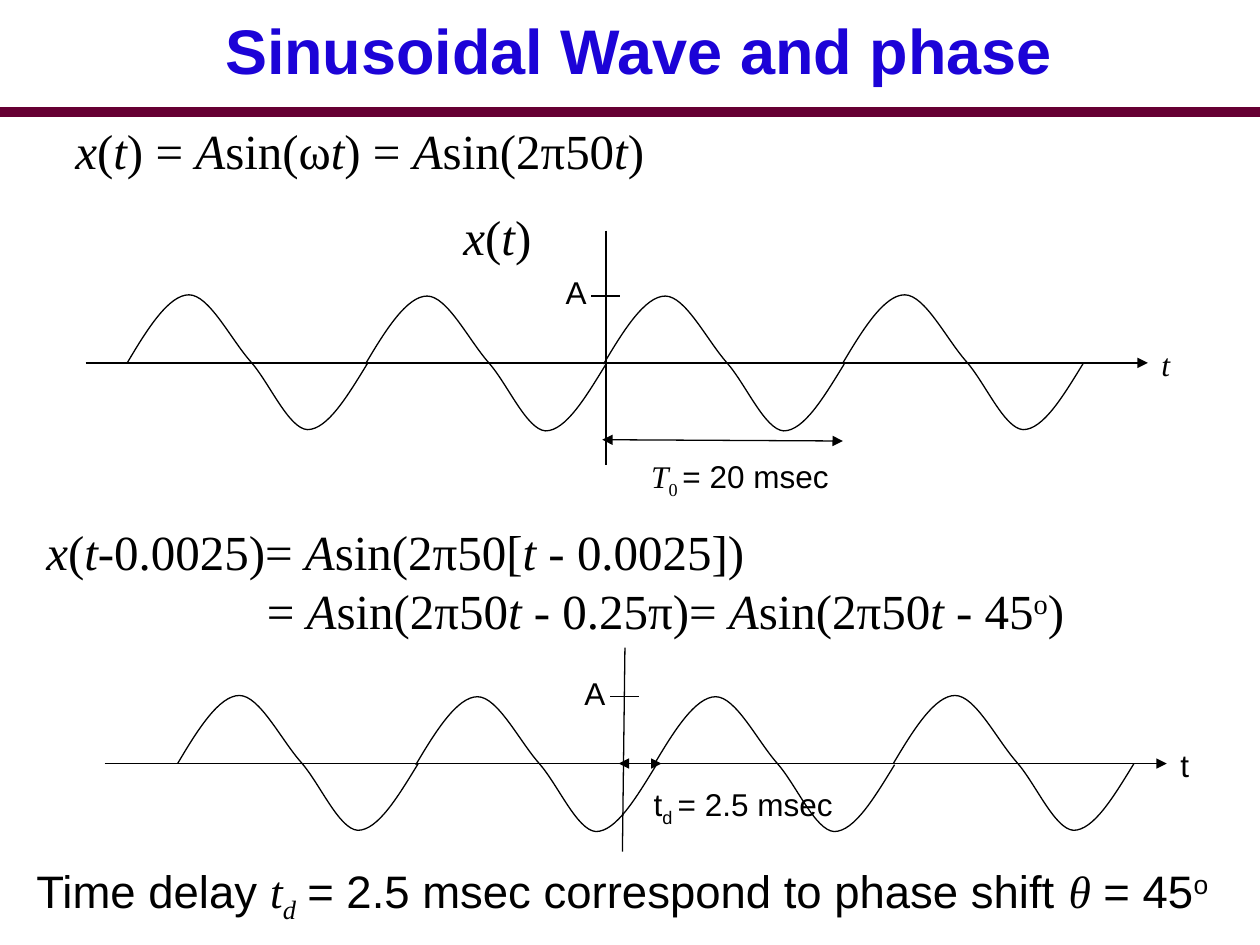
"""Build a slide that compares a sinusoidal wave with its phase-shifted version."""
from itertools import groupby

from lxml import etree
from pptx import Presentation
from pptx import util as u
from pptx.dml.color import RGBColor
from pptx.enum import shapes, text
from pptx.oxml import ns

BLACK = RGBColor(0x00, 0x00, 0x00)
BLUE = RGBColor(0x1C, 0x03, 0xD7)
MAROON = RGBColor(0x66, 0x00, 0x33)
SANS, SERIF = "Arial", "Times New Roman"
ITALIC, SUB, SUPER, SWITCH = "*", "_", "^", "~"

deck = Presentation()
deck.slide_width, deck.slide_height = u.Inches(10), u.Inches(7.5)
COLUMN, ROW = deck.slide_width / 10, deck.slide_height / 7.5
page = deck.slides.add_slide(deck.slide_layouts[5])


def write(wording, place, size=18, font=SANS, color=BLACK, bold=False, box=None, indent=0):
    """Write lines whose marks toggle italic, subscript, superscript and the other font."""
    left, top, width, height = place
    box = box or page.shapes.add_textbox(0, 0, 0, 0)
    box.left, box.width = int(left * COLUMN), int(width * COLUMN)
    box.top, box.height = int(top * ROW), int(height * ROW)
    frame = box.text_frame
    frame.word_wrap = False
    other = SERIF if font == SANS else SANS
    for number, line in enumerate(wording.split("\n")):
        para = frame.add_paragraph() if number else frame.paragraphs[0]
        if number and indent:
            para._p.get_or_add_pPr().set("marL", str(int(indent * COLUMN)))
        flags, letters = frozenset(), []
        for letter in line:
            if letter in ITALIC + SUB + SUPER + SWITCH:
                flags ^= {letter}
            else:
                letters.append((letter, flags))
        for style, group in groupby(letters, key=lambda pair: pair[1]):
            span = para.add_run()
            span.text = "".join(letter for letter, _ in group)
            span.font.size, span.font.bold = u.Pt(size), bold
            span.font.name = other if SWITCH in style else font
            span.font.italic = ITALIC in style
            span.font.color.rgb = color
            if SUB in style or SUPER in style:
                span.font._element.set("baseline", "-25000" if SUB in style else "30000")
    return frame


def draw_line(start, end, color=BLACK, weight=0.75, arrows=()):
    """Draw a straight line with triangles at the named ends."""
    (x1, y1), (x2, y2) = start, end
    line = page.shapes.add_connector(
        shapes.MSO_CONNECTOR.STRAIGHT,
        int(x1 * COLUMN), int(y1 * ROW), int(x2 * COLUMN), int(y2 * ROW))
    line.line.color.rgb, line.line.width = color, u.Pt(weight)
    for name in arrows:
        etree.SubElement(line.line._get_or_add_ln(), ns.qn("a:" + name), type="triangle")
    etree.SubElement(line._element.spPr, ns.qn("a:effectLst"))


title = write("Sinusoidal Wave and phase", (1.03, 0, 8.08, 0.74), size=36,
              color=BLUE, bold=True, box=page.shapes.title)
title.word_wrap = True
title.vertical_anchor = text.MSO_ANCHOR.BOTTOM
title.paragraphs[0].alignment = text.PP_ALIGN.CENTER
draw_line((0, 0.89), (10, 0.89), color=MAROON, weight=6)

BOTH = ("headEnd", "tailEnd")
PERIOD_STARTS = ((0, 0), (1.89, 0.01), (3.78, 0.01), (5.68, 0))
CYCLE = ((0, 0), (0.16, -0.27), (0.33, -0.54), (0.49, -0.54), (0.65, -0.54),
         (0.82, -0.19), (0.98, -0.01), (1.13, 0.16), (1.28, 0.52), (1.43, 0.53),
         (1.59, 0.53), (1.75, 0.26), (1.91, 0))

plots = (
    (0.68, 2.88, 1.01, "~*t*~", (4.81, 1.83), (4.81, 3.69)),
    (0.83, 6.06, 1.41, "t", (4.96, 5.14), (4.94, 6.76)),
)
for left, middle, wave_left, axis_name, axis_top, axis_bottom in plots:
    draw_line(axis_top, axis_bottom)
    draw_line((left, middle), (left + 8.24, middle))
    draw_line((left + 8.03, middle), (left + 8.43, middle), arrows=("tailEnd",))
    draw_line((left + 4.24, middle - 0.53), (left + 4.01, middle - 0.53))
    write("A", (left + 3.71, middle - 0.76, 0.37, 0.4))
    write(axis_name, (left + 8.44, middle - 0.19, 0.27, 0.4))
    for shift, drop in PERIOD_STARTS:
        points = [((wave_left + shift + x) * COLUMN, (middle + drop + y) * ROW)
                  for x, y in CYCLE]
        outline = page.shapes.build_freeform(*points[0])
        outline.add_line_segments(points[1:], close=False)
        wave = outline.convert_to_shape()
        wave.shadow.inherit = False
        wave.fill.background()
        wave.line.color.rgb, wave.line.width = BLACK, u.Pt(0.75)
        segments = list(wave._element.iter(ns.qn("a:lnTo")))
        for first in range(0, len(segments), 3):
            curve = etree.SubElement(segments[first].getparent(), ns.qn("a:cubicBezTo"))
            for segment in segments[first:first + 3]:
                curve.append(segment[0])
                segment.getparent().remove(segment)

draw_line((6.69, 3.5), (4.78, 3.49), arrows=BOTH)
draw_line((5.25, 6.06), (4.91, 6.06), arrows=BOTH)
write("~*T*_0 _~= 20 msec", (5.07, 3.58, 1.65, 0.4))
write("t_d _= 2.5 msec", (5.09, 6.18, 1.64, 0.4))

write("*x*(*t*) = *A*sin(ω*t*) = *A*sin(2π50*t*)", (0.5, 0.91, 4.82, 0.57), size=28, font=SERIF)
write("*x*(*t*)", (3.58, 1.59, 0.76, 0.57), size=28, font=SERIF)
write("*x*(*t*-0.0025)= *A*sin(2π50[*t *- 0.0025])\n"
      "= *A*sin(2π50*t *- 0.25π)= *A*sin(2π50*t *- 45^o^)",
      (0.27, 4.09, 8.44, 1.04), size=28, font=SERIF, indent=1.75)
write("Time delay ~*t_d_ *~= 2.5 msec correspond to phase shift ~*θ*~ = 45^o^",
      (0.19, 6.8, 9.66, 0.54), size=26)

deck.save("out.pptx")
